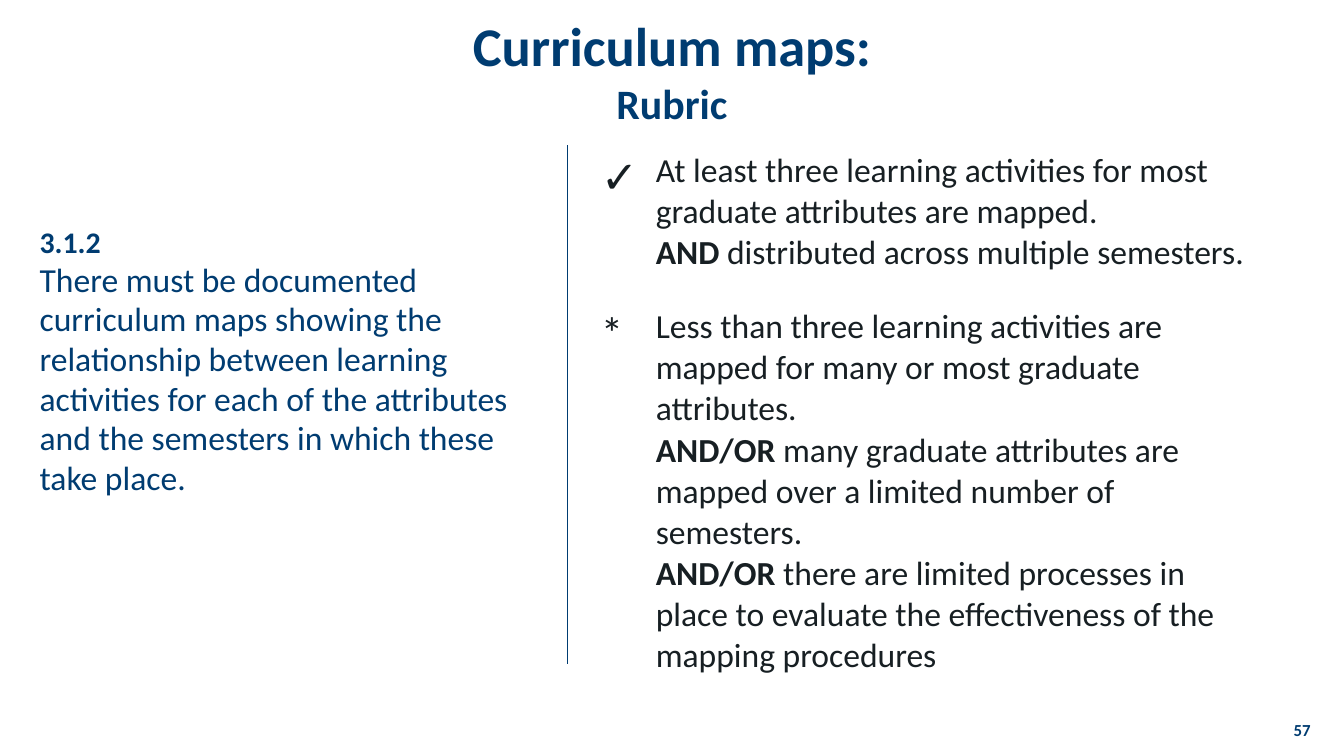
from dataclasses import dataclass

from pptx import Presentation
from pptx.dml.color import RGBColor
from pptx.enum.shapes import MSO_CONNECTOR
from pptx.enum.text import MSO_ANCHOR, PP_ALIGN
from pptx.oxml.ns import qn
from pptx.util import Cm, Pt


@dataclass(frozen=True)
class Theme:
    font: str = "Calibri"
    navy: RGBColor = RGBColor(0x00, 0x3C, 0x71)
    ink: RGBColor = RGBColor(0x17, 0x1F, 0x23)
    title: float = 29.2
    subtitle: float = 22.4
    mark: float = 24
    body: float = 18
    code: float = 16
    number: float = 9


THEME = Theme()

CRITERION = "3.1.2"
REQUIREMENT = [
    "There must be documented curriculum maps showing the relationship "
    "between learning activities for each of the attributes",
    "and the semesters in which these take place.",
]

# Each row: mark, mark is bold, paragraphs of (bold lead, text)
RUBRIC = [
    ("✓", True, [
        ("", "At least three learning activities for most graduate "
             "attributes are mapped."),
        ("AND", " distributed across multiple semesters."),
    ]),
    ("*", False, [
        ("", "Less than three learning activities are mapped for many or "
             "most graduate attributes."),
        ("AND/OR ", "many graduate attributes are mapped over a limited "
                    "number of semesters."),
        ("AND/OR ", "there are limited processes in place to evaluate the "
                    "effectiveness of the mapping procedures"),
    ]),
]


def style(font, size, color, bold=None):
    font.name = THEME.font
    font.size = Pt(size)
    font.color.rgb = color
    font.bold = bold


def next_paragraph(tf, index):
    return tf.paragraphs[0] if index == 0 else tf.add_paragraph()


def add_text_box(slide, box):
    tf = slide.shapes.add_textbox(*box).text_frame
    tf.word_wrap = True
    return tf


def place_title(slide, box, title, subtitle):
    sp = slide.shapes.title
    sp.left, sp.top, sp.width, sp.height = box
    tf = sp.text_frame
    tf.vertical_anchor = MSO_ANCHOR.BOTTOM
    p = tf.paragraphs[0]
    p.alignment = PP_ALIGN.CENTER
    r = p.add_run()
    r.text = title
    style(r.font, THEME.title, THEME.navy, True)
    p.add_line_break()
    r = p.add_run()
    r.text = subtitle
    style(r.font, THEME.subtitle, THEME.navy, True)


def add_requirement(slide, box):
    tf = add_text_box(slide, box)
    for i, text in enumerate([CRITERION, *REQUIREMENT]):
        p = next_paragraph(tf, i)
        p.text = text
        p.line_spacing = 0.98
        heading = i == 0
        style(p.font, THEME.code if heading else THEME.body, THEME.navy, heading)


def add_divider(slide, x, top, bottom):
    line = slide.shapes.add_connector(MSO_CONNECTOR.STRAIGHT, x, top, x, bottom)
    line.line.color.rgb = THEME.navy
    line.line.width = Pt(0.5)
    sp_pr = line._element.spPr
    sp_pr.append(sp_pr.makeelement(qn("a:effectLst"), {}))


def add_rubric(slide, box, mark_width, row_heights):
    left, top, width, height = box
    table = slide.shapes.add_table(len(RUBRIC), 2, left, top, width, height).table
    table.first_row = table.horz_banding = False
    table.columns[0].width = mark_width
    table.columns[1].width = width - mark_width
    for row, row_height, (mark, bold, paragraphs) in zip(
            table.rows, row_heights, RUBRIC):
        row.height = row_height
        mark_cell, text_cell = row.cells
        mark_cell.fill.background()
        text_cell.fill.background()

        p = mark_cell.text_frame.paragraphs[0]
        p.text = mark
        style(p.font, THEME.mark, THEME.ink, bold)

        for i, (lead, text) in enumerate(paragraphs):
            p = next_paragraph(text_cell.text_frame, i)
            style(p.font, THEME.body, THEME.ink)
            if lead:
                r = p.add_run()
                r.text = lead
                r.font.bold = True
            p.add_run().text = text


def add_slide_number(slide, box, number):
    tf = add_text_box(slide, box)
    tf.margin_top = tf.margin_bottom = 0
    tf.vertical_anchor = MSO_ANCHOR.MIDDLE
    p = tf.paragraphs[0]
    p.text = str(number)
    p.alignment = PP_ALIGN.RIGHT
    style(p.font, THEME.number, THEME.navy, True)


def main():
    prs = Presentation()
    prs.slide_width, prs.slide_height = Cm(25.4), Cm(14.28)
    slide = prs.slides.add_slide(prs.slide_layouts[5])

    place_title(slide, (Cm(1.27), Cm(0.15), Cm(22.86), Cm(2.39)),
                "Curriculum maps:", "Rubric")
    add_requirement(slide, (Cm(0.5), Cm(4.14), Cm(10), Cm(5.56)))
    add_divider(slide, Cm(10.72), Cm(2.74), Cm(12.55))
    add_rubric(slide, (Cm(11.1), Cm(2.72), Cm(13.03), Cm(10.06)),
               mark_width=Cm(1.04), row_heights=(Cm(2.95), Cm(7.11)))
    add_slide_number(slide, (Cm(24.1), Cm(13.59), Cm(0.92), Cm(0.4)), 57)

    prs.save("out.pptx")


if __name__ == "__main__":
    main()
